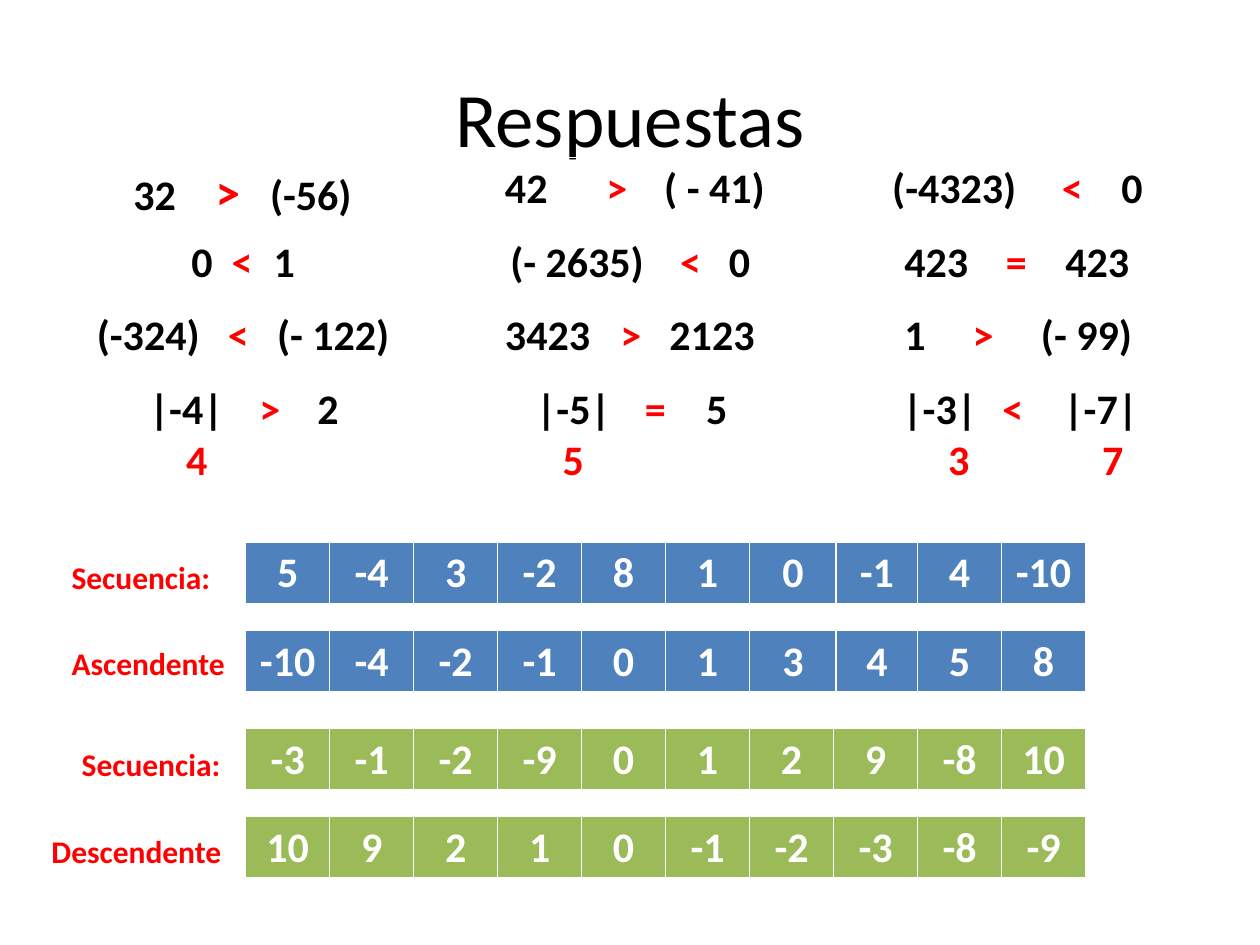
import pptx
import pptx.util
import pptx.dml.color
import pptx.enum.text
import pptx.oxml
from lxml import etree

Pt = pptx.util.Pt
RGBColor = pptx.dml.color.RGBColor
PP_ALIGN = pptx.enum.text.PP_ALIGN
MSO_ANCHOR = pptx.enum.text.MSO_ANCHOR

BLACK = RGBColor(0x00, 0x00, 0x00)
RED = RGBColor(0xFF, 0x00, 0x00)
WHITE = RGBColor(0xFF, 0xFF, 0xFF)
BLUE = RGBColor(0x4F, 0x81, 0xBD)
GREEN = RGBColor(0x9B, 0xBB, 0x59)
FONT = "Calibri"

HEADING = "Respuestas"

COMPARISONS = [
    [(("32", ">", "(-56)"), (41, 88, 119)),
     (("42", ">", "( - 41)"), (32, 90, 123)),
     (("(-4323)", "<", "0"), (32, 129, 163))],
    [(("0", "<", "1"), (74, 97, 121)),
     (("(- 2635)", "<", "0"), (35, 132, 160)),
     (("423", "=", "423"), (39, 97, 131))],
    [(("(-324)", "<", "(- 122)"), (20, 95, 123)),
     (("3423", ">", "2123"), (32, 98, 126)),
     (("1", ">", "(- 99)"), (39, 78, 117))],
    [(("|-4|", ">", "2"), (50, 113, 146)),
     (("|-5|", "=", "5"), (50, 112, 147)),
     (("|-3|", "<", "|-7|"), (38, 95, 130))],
]
ABSOLUTE_VALUES = [(("4",), (71,)), (("5",), (65,)), (("3", "7"), (64, 152))]
BIG_SIGN_CELL = (0, 0)

BLUE_WIDTHS = [48] * 6 + [49.5, 46.5] + [48] * 2
GREEN_WIDTHS = [48] * 10
SEQUENCES = [
    ("Secuencia:", 33.8, 315.4, 309.6, BLUE, BLUE_WIDTHS,
     [5, -4, 3, -2, 8, 1, 0, -1, 4, -10]),
    ("Ascendente", 33.8, 364.3, 360, BLUE, BLUE_WIDTHS,
     [-10, -4, -2, -1, 0, 1, 3, 4, 5, 8]),
    ("Secuencia:", 39.6, 421.9, 416.2, GREEN, GREEN_WIDTHS,
     [-3, -1, -2, -9, 0, 1, 2, 9, -8, 10]),
    ("Descendente", 22.3, 471.6, 466.6, GREEN, GREEN_WIDTHS,
     [10, 9, 2, 1, 0, -1, -2, -3, -8, -9]),
]
BORDERS = [("lnL", 1), ("lnR", 1), ("lnT", 1), ("lnB", 3)]


def style(run, size, color, bold=True):
    run.font.name = FONT
    run.font.size = Pt(size)
    run.font.bold = bold
    run.font.color.rgb = color


def add_label(slide, text, left, top, width, height, size, color, bold=True):
    frame = slide.shapes.add_textbox(Pt(left), Pt(top), Pt(width), Pt(height)).text_frame
    frame.text = text
    style(frame.paragraphs[0].runs[0], size, color, bold)
    return frame


def add_grid(slide, left, top, widths, heights):
    grid = slide.shapes.add_table(len(heights), len(widths), Pt(left), Pt(top),
                                  Pt(sum(widths)), Pt(sum(heights))).table
    grid.first_row = False
    grid.horz_banding = False
    for column, width in zip(grid.columns, widths):
        column.width = Pt(width)
    for row, height in zip(grid.rows, heights):
        row.height = Pt(height)
    return grid


def write_at_stops(paragraph, parts, stops, colors, sizes):
    paragraph.alignment = PP_ALIGN.LEFT
    stop_list = etree.SubElement(paragraph._p.get_or_add_pPr(), pptx.oxml.ns.qn("a:tabLst"))
    for stop in stops:
        etree.SubElement(stop_list, pptx.oxml.ns.qn("a:tab"), pos=str(Pt(stop)), algn="l")
    for part, color, size in zip(parts, colors, sizes):
        run = paragraph.add_run()
        run.text = "\t" + part
        style(run, size, color)


def add_borders(cell):
    properties = cell._tc.get_or_add_tcPr()
    for side, width in BORDERS:
        line = etree.SubElement(properties, pptx.oxml.ns.qn("a:" + side), w=str(Pt(width)))
        fill = etree.SubElement(line, pptx.oxml.ns.qn("a:solidFill"))
        etree.SubElement(fill, pptx.oxml.ns.qn("a:srgbClr"), val=str(WHITE))


def add_comparisons(slide):
    grid = add_grid(slide, 28.1, 90, [221.3] * 3, [42, 42, 42, 65.8])
    for r, row in enumerate(COMPARISONS):
        for c, (parts, stops) in enumerate(row):
            cell = grid.cell(r, c)
            cell.fill.background()
            sign_size = 28 if (r, c) == BIG_SIGN_CELL else 24
            write_at_stops(cell.text_frame.paragraphs[0], parts, stops,
                           (BLACK, RED, BLACK), (24, sign_size, 24))
    for c, (values, stops) in enumerate(ABSOLUTE_VALUES):
        paragraph = grid.cell(len(COMPARISONS) - 1, c).text_frame.add_paragraph()
        write_at_stops(paragraph, values, stops, (RED, RED), (24, 24))


def add_sequence(slide, label, label_left, label_top, top, color, widths, numbers):
    add_label(slide, label, label_left, label_top, 112, 29, 18, RED).word_wrap = False
    grid = add_grid(slide, 140.4, top, widths, [36])
    for cell, number in zip(grid.rows[0].cells, numbers):
        add_borders(cell)
        cell.fill.solid()
        cell.fill.fore_color.rgb = color
        cell.text_frame.text = str(number)
        paragraph = cell.text_frame.paragraphs[0]
        paragraph.alignment = PP_ALIGN.CENTER
        style(paragraph.runs[0], 24, WHITE)


def main():
    presentation = pptx.Presentation()
    presentation.slide_width = Pt(720)
    presentation.slide_height = Pt(540)
    slide = presentation.slides.add_slide(presentation.slide_layouts[6])

    heading = add_label(slide, HEADING, 36, 21.6, 648, 90, 44, BLACK, False)
    heading.word_wrap = True
    heading.vertical_anchor = MSO_ANCHOR.MIDDLE
    heading.paragraphs[0].alignment = PP_ALIGN.CENTER

    add_comparisons(slide)
    for sequence in SEQUENCES:
        add_sequence(slide, *sequence)
    presentation.save("out.pptx")


if __name__ == "__main__":
    main()
